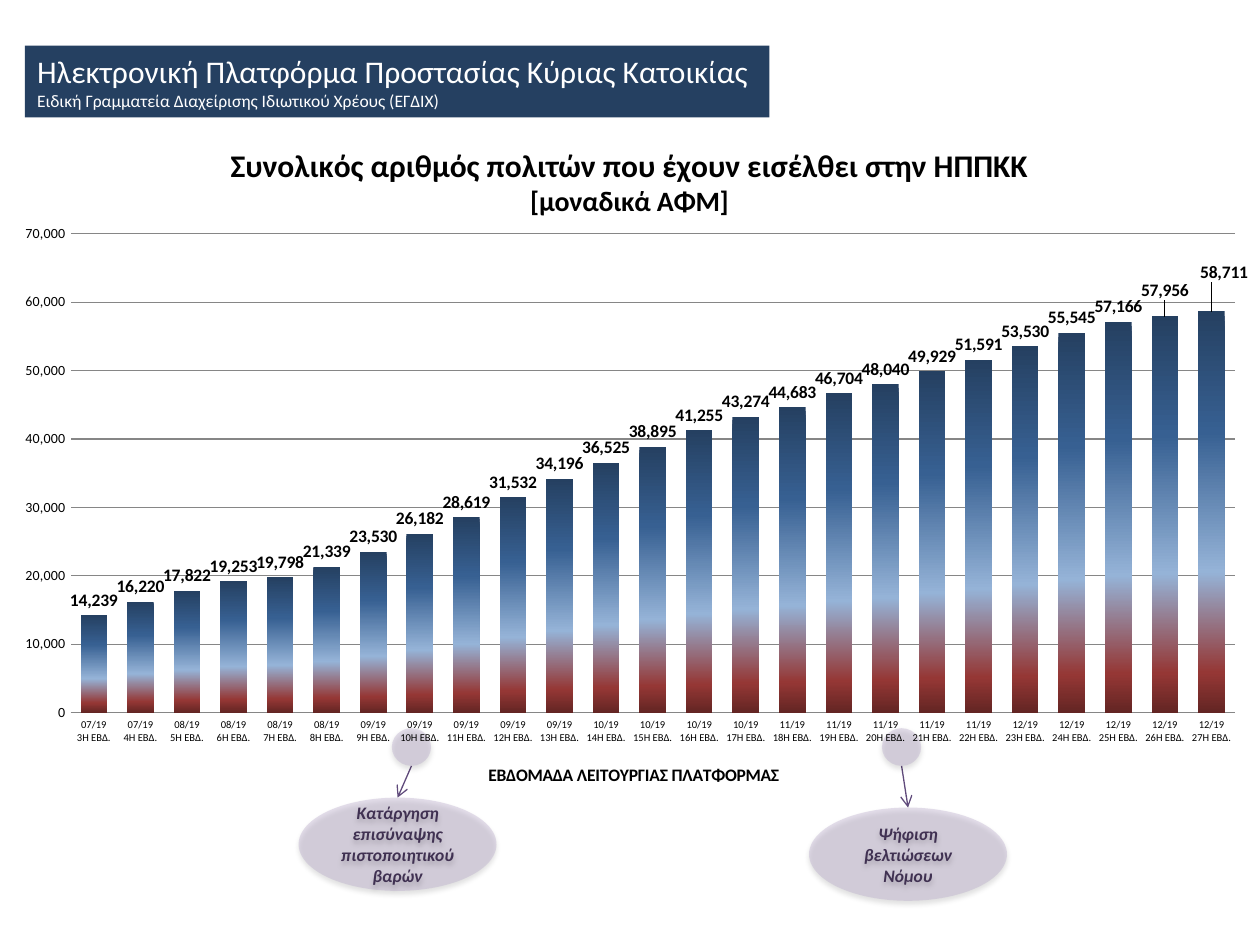
from lxml import etree
from pptx import Presentation
from pptx.chart.data import CategoryChartData
from pptx.dml.color import RGBColor
from pptx.enum.chart import XL_CHART_TYPE, XL_LABEL_POSITION, XL_TICK_MARK
from pptx.enum.shapes import MSO_CONNECTOR, MSO_SHAPE
from pptx.enum.text import MSO_ANCHOR, MSO_AUTO_SIZE, PP_ALIGN
from pptx.oxml.ns import qn
from pptx.util import Cm, Pt

COLUMNS = XL_CHART_TYPE.COLUMN_CLUSTERED
OUTSIDE = XL_LABEL_POSITION.OUTSIDE_END
NO_TICK = XL_TICK_MARK.NONE
OVAL = MSO_SHAPE.OVAL
STRAIGHT = MSO_CONNECTOR.STRAIGHT
MIDDLE = MSO_ANCHOR.MIDDLE
CENTER = PP_ALIGN.CENTER
GROW = MSO_AUTO_SIZE.SHAPE_TO_FIT_TEXT

WEEKS_PER_MONTH = {"07": 2, "08": 4, "09": 5, "10": 4, "11": 5, "12": 5}
FIRST_WEEK = 3
CITIZENS = [14239, 16220, 17822, 19253, 19798, 21339, 23530, 26182, 28619,
            31532, 34196, 36525, 38895, 41255, 43274, 44683, 46704, 48040,
            49929, 51591, 53530, 55545, 57166, 57956, 58711]
BAR_STOPS = [(0, "254061"), (30, "376092"), (65, "95B3D7"),
             (90, "953735"), (100, "632523")]
MOVED_LABELS = {23: (0, -0.015), 24: (0.01, -0.033)}
NUMBER = "#,##0"


def rgb(value):
    return RGBColor.from_string(value)


def sub(parent, tag, **attrs):
    """Append a child element with the given attributes."""
    el = etree.SubElement(parent, qn(tag))
    for name, value in attrs.items():
        el.set(name, str(value))
    return el


def place(parent, index, x, y, w=None, h=None, edge=True):
    """Give a chart part a manual layout, in fractions of the chart."""
    for old in parent.findall(qn("c:layout")):
        parent.remove(old)
    layout = etree.Element(qn("c:layout"))
    manual = sub(layout, "c:manualLayout")
    if w:
        sub(manual, "c:layoutTarget", val="inner")
    if edge:
        sub(manual, "c:xMode", val="edge")
        sub(manual, "c:yMode", val="edge")
    for tag, value in (("c:x", x), ("c:y", y), ("c:w", w), ("c:h", h)):
        if value is not None:
            sub(manual, tag, val=value)
    parent.insert(index, layout)


def gradient(sp_pr, stops):
    fill = etree.Element(qn("a:gradFill"), rotWithShape="1")
    gs_list = sub(fill, "a:gsLst")
    for pos, color in stops:
        gs = sub(gs_list, "a:gs", pos=pos * 1000)
        sub(gs, "a:srgbClr", val=color)
    sub(fill, "a:lin", ang=90 * 60000, scaled=0)
    sp_pr.insert(0, fill)


class Deck:
    font = "Calibri"
    black, white, navy = "000000", "FFFFFF", "254061"
    lilac, violet, plum, grid = "B3A2C7", "604A7B", "403152", "868686"

    def __init__(self):
        self.prs = Presentation()
        self.prs.slide_width, self.prs.slide_height = Cm(25.4), Cm(19.05)
        self.s = self.prs.slides.add_slide(self.prs.slide_layouts[6])

    def style(self, font, size, color=black, bold=False, italic=False):
        font.name, font.size = self.font, Pt(size)
        font.bold, font.italic = bold, italic
        font.color.rgb = rgb(color)

    def banner(self, x, y, w, h, lines):
        sp = self.s.shapes.add_textbox(Cm(x), Cm(y), Cm(w), Cm(h))
        sp.fill.solid()
        sp.fill.fore_color.rgb = rgb(self.navy)
        tf = sp.text_frame
        tf.word_wrap, tf.auto_size = False, GROW
        tf.text = "\n".join(text for text, _ in lines)
        for p, (_, size) in zip(tf.paragraphs, lines):
            self.style(p.runs[0].font, size, self.white)

    def oval(self, shapes, x, y, w, h, text=""):
        sp = shapes.add_shape(OVAL, Cm(x), Cm(y), Cm(w), Cm(h))
        sp.fill.solid()
        sp.fill.fore_color.rgb = rgb(self.lilac)
        sp_pr = sp.fill._xPr
        sub(sp_pr.find(".//" + qn("a:srgbClr")), "a:alpha", val=34000)
        sp.line.fill.background()
        sp.shadow.inherit = False
        shadow = sub(sp_pr.find(qn("a:effectLst")), "a:outerShdw",
                     blurRad=Pt(3.1), dist=Pt(1.8), dir=90 * 60000,
                     rotWithShape=0)
        sub(sub(shadow, "a:srgbClr", val=self.black), "a:alpha", val=35000)
        if text:
            tf = sp.text_frame
            tf.word_wrap, tf.vertical_anchor = True, MIDDLE
            tf.margin_left = tf.margin_right = Cm(0.13)
            tf.text = text
            p = tf.paragraphs[0]
            p.alignment = CENTER
            self.style(p.runs[0].font, 10, self.plum, True, True)

    def arrow(self, shapes, x1, y1, x2, y2):
        sp = shapes.add_connector(STRAIGHT, Cm(x1), Cm(y1), Cm(x2), Cm(y2))
        sp.line.color.rgb, sp.line.width = rgb(self.violet), Pt(0.75)
        sub(sp.line._get_or_add_ln(), "a:tailEnd", type="arrow")
        sub(sp._element.spPr, "a:effectLst")

    def callout(self, dot_x, note_x, note_y, text):
        """Group a dot under a week with the note it points to."""
        dot_y, dot_w, dot_h, note_w, note_h = 14.68, 0.79, 0.76, 3.99, 1.88
        shapes = self.s.shapes.add_group_shape().shapes
        self.arrow(shapes, dot_x + dot_w / 2, dot_y + dot_h,
                   note_x + note_w / 2, note_y)
        self.oval(shapes, dot_x, dot_y, dot_w, dot_h)
        self.oval(shapes, note_x, note_y, note_w, note_h, text)

    def title(self, owner, lines, x, y):
        title = owner.chart_title if hasattr(owner, "chart_title") else owner.axis_title
        tf = title.text_frame
        tf.text = "\n".join(text for text, _ in lines)
        for p, (_, size) in zip(tf.paragraphs, lines):
            p.alignment = CENTER
            self.style(p.runs[0].font, size, bold=True)
        place(title._element, 1, x, y)

    def column_chart(self, x, y, w, h, categories, values):
        data = CategoryChartData(number_format=NUMBER)
        data.categories = categories
        data.add_series("Series 1", values)
        chart = self.s.shapes.add_chart(
            COLUMNS, Cm(x), Cm(y), Cm(w), Cm(h), data).chart
        self.style(chart.font, 10)
        chart.has_legend = False
        place(chart._chartSpace.chart.plotArea, 0, 0.056, 0.182, 0.924, 0.68)
        self.title(chart, [
            ("Συνολικός αριθμός πολιτών που έχουν εισέλθει στην ΗΠΠΚΚ", 18),
            ("[μοναδικά ΑΦΜ]", 16)], 0.18, 0.05)

        cat, val = chart.category_axis, chart.value_axis
        for axis, size in ((cat, 6), (val, 8)):
            axis.major_tick_mark = axis.minor_tick_mark = NO_TICK
            self.style(axis.tick_labels.font, size)
        self.title(cat, [("ΕΒΔΟΜΑΔΑ ΛΕΙΤΟΥΡΓΙΑΣ ΠΛΑΤΦΟΡΜΑΣ", 10)], 0.385, 0.93)
        val.minimum_scale, val.maximum_scale, val.major_unit = 0, 70000, 10000
        val.tick_labels.number_format = NUMBER
        val.tick_labels.number_format_is_linked = False
        val.format.line.fill.background()
        for line in (cat.format.line, val.major_gridlines.format.line):
            line.color.rgb, line.width = rgb(self.grid), Pt(0.75)

        plot = chart.plots[0]
        plot.gap_width, plot.vary_by_categories = 75, False
        series = plot.series[0]
        series.invert_if_negative = False
        gradient(series._element.get_or_add_spPr(), BAR_STOPS)
        labels = series.data_labels
        labels.show_value, labels.position = True, OUTSIDE
        labels.number_format, labels.number_format_is_linked = NUMBER, False
        self.style(labels.font, 10, bold=True)
        for i, (dx, dy) in MOVED_LABELS.items():
            label = series.points[i].data_label
            label.position = OUTSIDE
            self.style(label.font, 10, bold=True)
            place(label._get_or_add_dLbl(), 1, dx, dy, edge=False)


def main():
    deck = Deck()
    deck.banner(0.5, 0.92, 15.01, 1.45, [
        ("Ηλεκτρονική Πλατφόρμα Προστασίας Κύριας Κατοικίας", 18),
        ("Ειδική Γραμματεία Διαχείρισης Ιδιωτικού Χρέους (ΕΓΔΙΧ)", 10)])
    deck.callout(7.9, 6.02, 16.08, "Κατάργηση επισύναψης πιστοποιητικού βαρών")
    deck.callout(17.78, 16.31, 16.28, "Ψήφιση βελτιώσεων Νόμου")
    months = [m for m, count in WEEKS_PER_MONTH.items() for _ in range(count)]
    weeks = [f"{m}/19\n{n}Η ΕΒΔ." for n, m in enumerate(months, FIRST_WEEK)]
    deck.column_chart(0, 2.13, 25.4, 14.2, weeks, CITIZENS)
    deck.prs.save("out.pptx")


if __name__ == "__main__":
    main()
